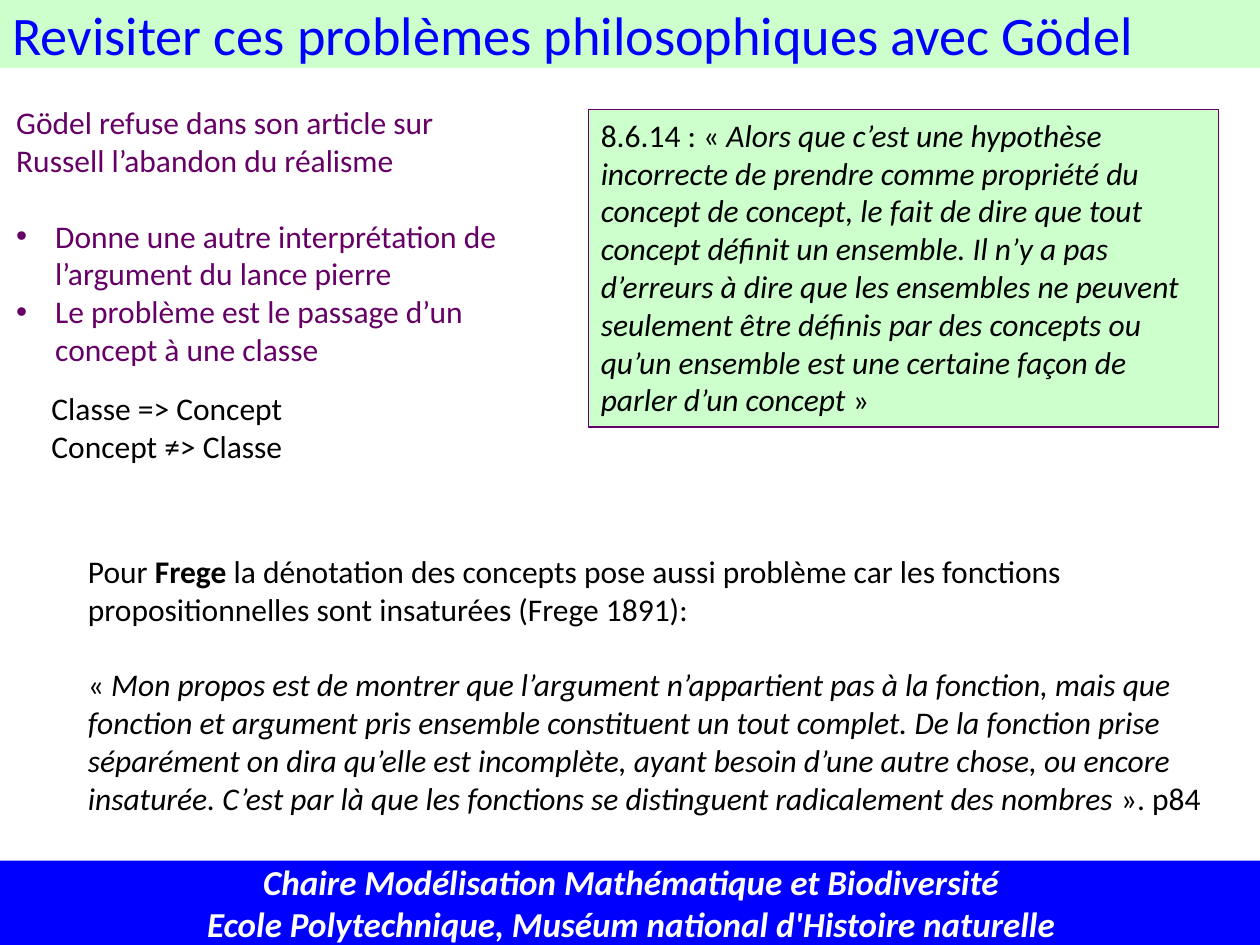
from lxml import etree
from pptx import Presentation
from pptx.dml.color import RGBColor
from pptx.enum.shapes import MSO_SHAPE
from pptx.enum.text import MSO_ANCHOR, PP_ALIGN
from pptx.oxml.ns import qn
from pptx.util import Inches, Pt

RECT = MSO_SHAPE.RECTANGLE
TOP, MIDDLE = MSO_ANCHOR.TOP, MSO_ANCHOR.MIDDLE
LEFT, CENTER = PP_ALIGN.LEFT, PP_ALIGN.CENTER

WIDTH, HEIGHT = Inches(10), Inches(7.5)
COLS, ROWS = 100, 75
FONT = "Calibri"
BODY = 18
GAP = 21.6
INDENT = 3.1
COLORS = {
    "mint": "CCFFCC",
    "blue": "0000FF",
    "plum": "660066",
    "black": "000000",
    "white": "FFFFFF",
}


def color(name):
    return RGBColor.from_string(COLORS[name])


def span(cols):
    return int(WIDTH * cols / COLS)


def place(box):
    left, top, width, height = box
    return (span(left), int(HEIGHT * top / ROWS),
            span(width), int(HEIGHT * height / ROWS))


def write(frame, paras, ink, size=BODY, align=LEFT, anchor=TOP, wrap=True):
    frame.word_wrap = wrap
    frame.vertical_anchor = anchor
    for index, parts in enumerate(paras):
        para = frame.add_paragraph() if index else frame.paragraphs[0]
        para.alignment = align
        for text, style in parts:
            run = para.add_run()
            run.text = text
            font = run.font
            font.name, font.size = FONT, Pt(size)
            font.color.rgb = color(ink)
            font.bold, font.italic = "b" in style, "i" in style


def panel(slide, box, fill, line=None):
    shape = slide.shapes.add_shape(RECT, *place(box))
    shape.shadow.inherit = False
    shape.fill.solid()
    shape.fill.fore_color.rgb = color(fill)
    if line:
        shape.line.color.rgb = color(line)
        shape.line.width = Pt(0.75)
    else:
        shape.line.fill.background()
    return shape.text_frame


def note(slide, box):
    return slide.shapes.add_textbox(*place(box)).text_frame


def bullet(para):
    props = para._p.get_or_add_pPr()
    props.set("marL", str(span(INDENT)))
    props.set("indent", str(-span(INDENT)))
    etree.SubElement(props, qn("a:buFont")).set("typeface", "Arial")
    etree.SubElement(props, qn("a:buChar")).set("char", "•")


def title(slide, box):
    text = "Revisiter ces problèmes philosophiques avec Gödel"
    write(panel(slide, box, "mint"), [[(text, "")]], "blue", 31, anchor=MIDDLE)


def thesis(slide, box):
    lines = [
        "Gödel refuse dans son article sur Russell l’abandon du réalisme",
        "Donne une autre interprétation de l’argument du lance pierre",
        "Le problème est le passage d’un concept à une classe",
    ]
    frame = note(slide, box)
    write(frame, [[(line, "")] for line in lines], "plum")
    points = frame.paragraphs[1:]
    points[0].space_before = Pt(GAP)
    for para in points:
        bullet(para)


def quote(slide, box):
    parts = [
        ("8.6.14 : « ", ""),
        ("Alors que c’est une hypothèse incorrecte de prendre comme propriété "
         "du concept de concept, le fait de dire que tout concept définit un "
         "ensemble. Il n’y a pas d’erreurs à dire que les ensembles ne peuvent "
         "seulement être définis par des concepts ou qu’un ensemble est une "
         "certaine façon de parler d’un concept ", "i"),
        ("»", ""),
    ]
    write(panel(slide, box, "mint", "plum"), [parts], "black")


def rules(slide, box):
    lines = ["Classe => Concept", "Concept ≠> Classe"]
    write(note(slide, box), [[(line, "")] for line in lines], "black",
          wrap=False)


def frege(slide, box):
    intro = [
        ("Pour ", ""),
        ("Frege", "b"),
        (" la dénotation des concepts pose aussi problème car les fonctions "
         "propositionnelles sont insaturées (Frege 1891):", ""),
    ]
    words = [
        ("« ", ""),
        ("Mon propos est de montrer que l’argument n’appartient pas à la "
         "fonction, mais que fonction et argument pris ensemble constituent un "
         "tout complet. De la fonction prise séparément on dira qu’elle est "
         "incomplète, ayant besoin d’une autre chose, ou encore insaturée. "
         "C’est par là que les fonctions se distinguent radicalement des "
         "nombres ", "i"),
        ("». p84", ""),
    ]
    frame = note(slide, box)
    write(frame, [intro, words], "black")
    frame.paragraphs[1].space_before = Pt(GAP)


def footer(slide, box):
    lines = [
        "Chaire Modélisation Mathématique et Biodiversité",
        "Ecole Polytechnique, Muséum national d'Histoire naturelle",
    ]
    write(panel(slide, box, "blue"), [[(line, "bi")] for line in lines],
          "white", 20, CENTER, MIDDLE)


def main():
    deck = Presentation()
    deck.slide_width, deck.slide_height = WIDTH, HEIGHT
    slide = deck.slides.add_slide(deck.slide_layouts[6])
    title(slide, (0, 0, 100.2, 5.4))
    thesis(slide, (0.3, 7.7, 41.5, 22.2))
    quote(slide, (46.7, 8.7, 50, 25.2))
    footer(slide, (0, 68.3, 100.2, 6.7))
    rules(slide, (3.1, 30.4, 20.5, 7.1))
    frege(slide, (6, 43.3, 90.7, 22.2))
    deck.save("out.pptx")


if __name__ == "__main__":
    main()
